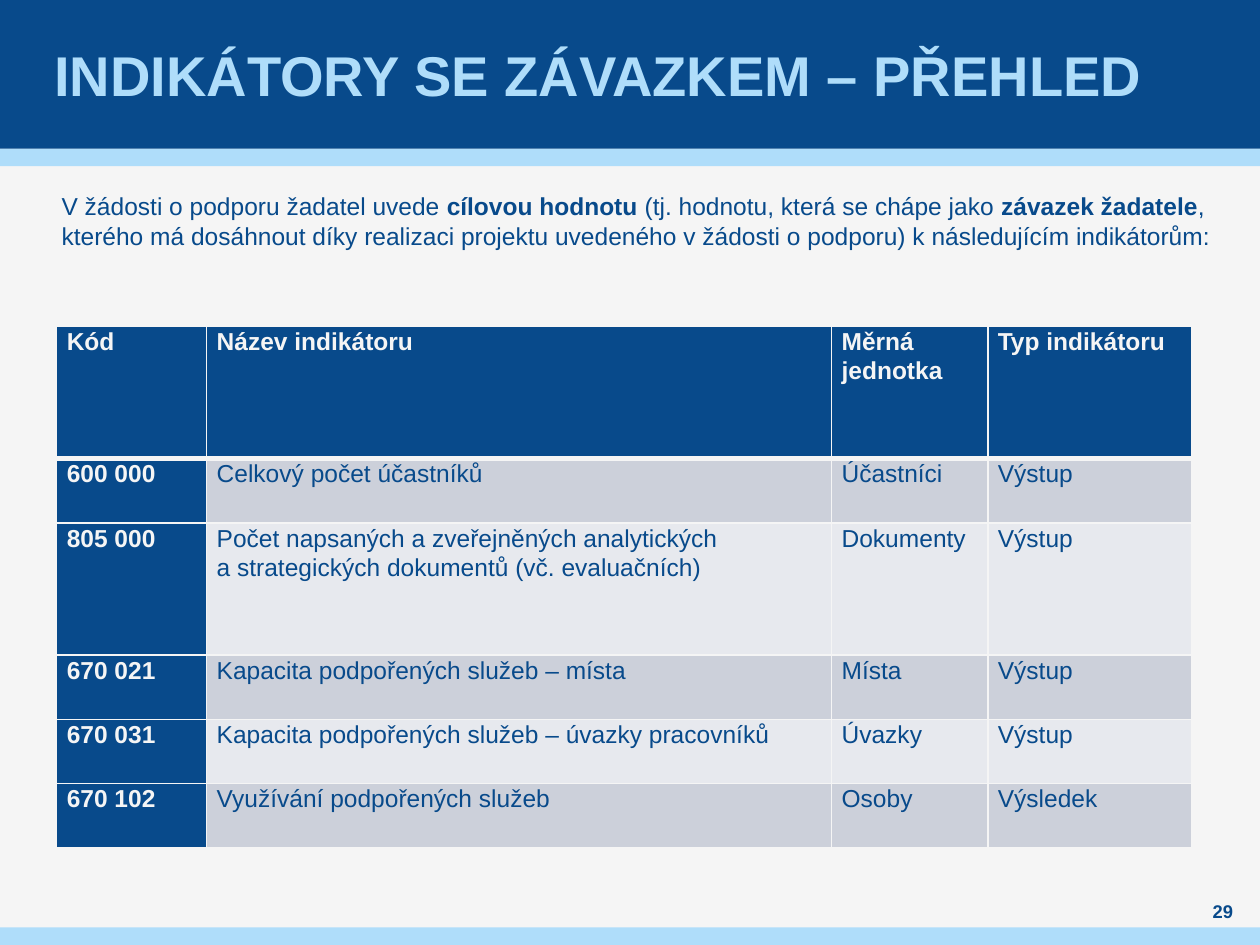
from lxml import etree
from pptx import Presentation
from pptx import util as u
from pptx.dml.color import RGBColor
from pptx.enum import shapes, text
from pptx.oxml.ns import qn

NAVY, SKY, PALE = "084A8B", "AFDDFA", "F5F5F5"
BANDS = ("CCD0DA", "E7E9EE")
COLUMN_WIDTHS = (1.19, 4.96, 1.24, 1.62)
ROW_HEIGHTS = (1.05, 0.51, 1.05, 0.51, 0.51, 0.51)
INDICATORS = (
    ("Kód", "Název indikátoru", "Měrná jednotka", "Typ indikátoru"),
    ("600 000", "Celkový počet účastníků", "Účastníci", "Výstup"),
    ("805 000", "Počet napsaných a zveřejněných analytických \n"
     "a strategických dokumentů (vč. evaluačních)", "Dokumenty", "Výstup"),
    ("670 021", "Kapacita podpořených služeb – místa", "Místa", "Výstup"),
    ("670 031", "Kapacita podpořených služeb – úvazky pracovníků", "Úvazky", "Výstup"),
    ("670 102", "Využívání podpořených služeb", "Osoby", "Výsledek"),
)
INTRO = (
    ("V žádosti o podporu žadatel uvede ", False),
    ("cílovou hodnotu ", True),
    ("(tj. hodnotu, která se chápe jako ", False),
    ("závazek žadatele", True),
    (", kterého má dosáhnout díky realizaci projektu uvedeného v žádosti o podporu)"
     " k následujícím indikátorům:", False),
)


def color(value):
    """Turn a hex string into a colour."""
    return RGBColor.from_string(value)


def set_attributes(target, values):
    """Set every attribute named in a dict of format values."""
    for name, value in values.items():
        setattr(target, name, value)


def paint(target, value):
    """Give a shape, cell or background a solid fill."""
    target.fill.solid()
    target.fill.fore_color.rgb = color(value)


def add_run(paragraph, content, size, shade, bold):
    """Append formatted text, breaking the line at each newline."""
    for index, line in enumerate(content.split("\n")):
        if index:
            paragraph.add_line_break()
        run = paragraph.add_run()
        run.text = line
        set_attributes(run.font, {"name": "Arial", "size": u.Pt(size), "bold": bold})
        run.font.color.rgb = color(shade)


def add_bar(slide, top, height, shade):
    """Draw a full-width bar."""
    bar = slide.shapes.add_shape(shapes.MSO_SHAPE.RECTANGLE, 0, u.Inches(top),
                                 u.Inches(10), u.Inches(height))
    bar.shadow.inherit = False
    bar.line.fill.background()
    paint(bar, shade)


def add_text(slide, box, runs, size, shade, frame_format, paragraph_format):
    """Add a wrapping text box holding one paragraph of (text, bold) runs."""
    frame = slide.shapes.add_textbox(*map(u.Inches, box)).text_frame
    set_attributes(frame, {"word_wrap": True, **frame_format})
    paragraph = frame.paragraphs[0]
    set_attributes(paragraph, paragraph_format)
    for content, bold in runs:
        add_run(paragraph, content, size, shade, bold)


def add_border(cell, side, width):
    """Append a pale border line to one side of a cell."""
    line = etree.SubElement(cell._tc.get_or_add_tcPr(), qn(f"a:ln{side}"),
                            w=str(u.Pt(width)))
    fill = etree.SubElement(line, qn("a:solidFill"))
    etree.SubElement(fill, qn("a:srgbClr"), val=PALE)


def fill_cell(cell, content, row, column):
    """Write and format one table cell according to its place."""
    heading = row == 0 or column == 0
    widths = {"L": 1, "R": 1, "T": 3 if row == 1 else 1, "B": 3 if row == 0 else 1}
    for side, width in widths.items():
        add_border(cell, side, width)
    paint(cell, NAVY if heading else BANDS[(row - 1) % 2])
    inset = u.Inches(0.08)
    set_attributes(cell, {"margin_left": inset, "margin_right": u.Inches(0.04),
                          "margin_top": 0, "margin_bottom": 0})
    paragraph = cell.text_frame.paragraphs[0]
    set_attributes(paragraph, {"line_spacing": 1.07, "space_after": u.Pt(8)})
    add_run(paragraph, content, 14, PALE if heading else NAVY, heading)


def add_indicator_table(slide):
    """Add the table of indicators."""
    box = (0.45, 2.59, sum(COLUMN_WIDTHS), sum(ROW_HEIGHTS))
    table = slide.shapes.add_table(len(ROW_HEIGHTS), len(COLUMN_WIDTHS),
                                   *map(u.Inches, box)).table
    table.first_col = True
    table.horz_banding = False
    for column, width in zip(table.columns, COLUMN_WIDTHS):
        column.width = u.Inches(width)
    for row, height in zip(table.rows, ROW_HEIGHTS):
        row.height = u.Inches(height)
    for row, values in enumerate(INDICATORS):
        for column, content in enumerate(values):
            fill_cell(table.cell(row, column), content, row, column)


def main():
    """Build and save the slide."""
    presentation = Presentation()
    set_attributes(presentation, {"slide_width": u.Inches(10),
                                  "slide_height": u.Inches(7.5)})
    slide = presentation.slides.add_slide(presentation.slide_layouts[6])
    paint(slide.background, PALE)
    for top, height, shade in ((1.18, 0.14, SKY), (0, 1.18, NAVY), (7.36, 0.14, SKY)):
        add_bar(slide, top, height, shade)

    middle = {"vertical_anchor": text.MSO_ANCHOR.MIDDLE,
              "margin_top": 0, "margin_bottom": 0}
    side = u.Inches(0.04)
    add_text(slide, (0.39, 0, 9.21, 1.18), [("INDIKÁTORY SE ZÁVAZKEM – PŘEHLED", True)],
             32, SKY, {**middle, "margin_left": side, "margin_right": side}, {})
    add_text(slide, (9.45, 7.13, 0.51, 0.2), [("29", True)], 10.5, NAVY,
             {**middle, "margin_left": 0, "margin_right": 0},
             {"alignment": text.PP_ALIGN.CENTER, "space_after": u.Pt(6)})
    add_text(slide, (0.39, 1.47, 9.49, 0.88), INTRO, 14, NAVY, {}, {})
    add_indicator_table(slide)
    presentation.save("out.pptx")


if __name__ == "__main__":
    main()
